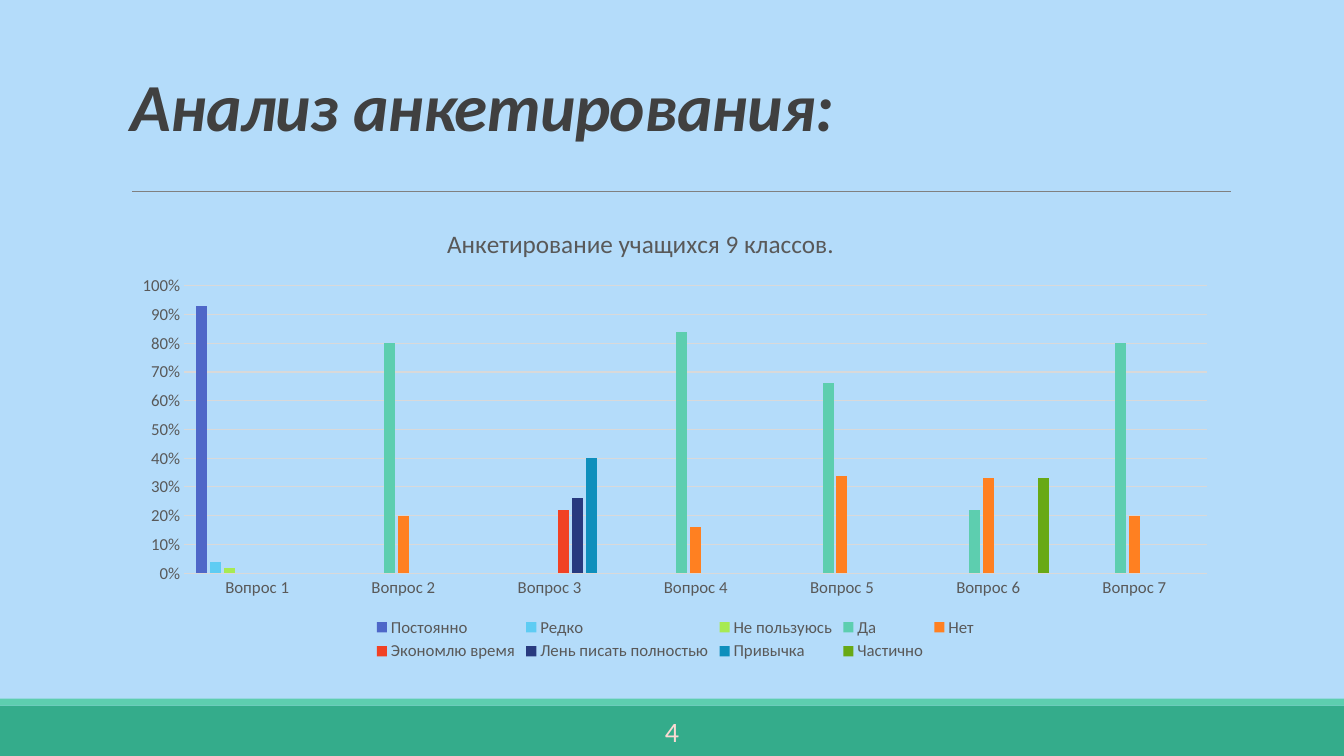
from lxml.etree import SubElement as Sub, Element
from pptx import Presentation
from pptx.chart.data import CategoryChartData as Data
from pptx.dml.color import RGBColor
from pptx.enum.chart import XL_CHART_TYPE as Kind, XL_LEGEND_POSITION as Side, XL_TICK_MARK as Tick
from pptx.enum.shapes import MSO_CONNECTOR as Link, MSO_SHAPE as Form
from pptx.enum.text import MSO_ANCHOR as Anchor, PP_ALIGN as Align
from pptx.oxml.ns import qn
from pptx.util import Inches, Pt

SKY = RGBColor(0xB4, 0xDC, 0xFA)
GREEN = RGBColor(0x34, 0xAC, 0x8B)
MINT = RGBColor(0x5D, 0xCE, 0xAF)
GREY = RGBColor(0x80, 0x80, 0x80)
DARK = RGBColor(0x40, 0x40, 0x40)
PINK = RGBColor(0xFC, 0xD9, 0xD3)
SLATE = RGBColor(0x59, 0x59, 0x59)
PALE = RGBColor(0xD9, 0xD9, 0xD9)
BLUE = RGBColor(0x4E, 0x67, 0xC8)
CYAN = RGBColor(0x5E, 0xCC, 0xF3)
LIME = RGBColor(0xA7, 0xEA, 0x52)
ORANGE = RGBColor(0xFF, 0x80, 0x21)
RED = RGBColor(0xF1, 0x41, 0x24)
NAVY = RGBColor(0x28, 0x3A, 0x7F)
TEAL = RGBColor(0x0E, 0x8F, 0xBC)
LEAF = RGBColor(0x68, 0xA9, 0x15)

WIDE, HIGH = Inches(13.33), Inches(7.5)
FACE = "Calibri"
COUNT = 7
SERIES = [
    ("Постоянно", BLUE, {1: 0.93}),
    ("Редко", CYAN, {1: 0.04}),
    ("Не пользуюсь", LIME, {1: 0.02}),
    ("Да", MINT, {2: 0.8, 4: 0.84, 5: 0.66, 6: 0.22, 7: 0.8}),
    ("Нет", ORANGE, {2: 0.2, 4: 0.16, 5: 0.34, 6: 0.33, 7: 0.2}),
    ("Экономлю время", RED, {3: 0.22}),
    ("Лень писать полностью", NAVY, {3: 0.26}),
    ("Привычка", TEAL, {3: 0.4}),
    ("Частично", LEAF, {6: 0.33}),
]


def grid(x, y, w, h):
    """Turn columns and rows of a 100 by 100 grid into slide lengths."""
    return [int(n * full / 100) for n, full in ((x, WIDE), (y, HIGH), (w, WIDE), (h, HIGH))]


def style(item, **values):
    """Set each given attribute on the item."""
    for name, value in values.items():
        setattr(item, name, value)


def ink(font, size, color, **more):
    """Give a font its face, size and colour."""
    style(font, name=FACE, size=Pt(size), **more)
    font.color.rgb = color


def stroke(line, color, width):
    """Give a line its colour and width."""
    line.color.rgb = color
    line.width = Pt(width)


def band(slide, box, color):
    """Draw a plain bar."""
    bar = slide.shapes.add_shape(Form.RECTANGLE, *grid(*box))
    bar.shadow.inherit = False
    bar.fill.solid()
    bar.fill.fore_color.rgb = color
    bar.line.fill.background()


def rule(slide, x, y, w):
    """Draw a thin level line."""
    left, top, span, _ = grid(x, y, w, 0)
    line = slide.shapes.add_connector(Link.STRAIGHT, left, top, left + span, top)
    stroke(line.line, GREY, 0.5)
    Sub(line._element.spPr, qn("a:effectLst"))


def label(slide, box, text, look, space=0, **para):
    """Write one line of text, centred in height."""
    frame = slide.shapes.add_textbox(*grid(*box)).text_frame
    style(frame, word_wrap=True, vertical_anchor=Anchor.MIDDLE)
    line = frame.paragraphs[0]
    style(line, **para)
    run = line.add_run()
    run.text = text
    ink(run.font, **look)
    run._r.get_or_add_rPr().set("spc", str(space))


def place(part, spot, inner=False, **shares):
    """Fix a chart part at shares of the chart's size."""
    for old in part.findall(qn("c:layout")):
        part.remove(old)
    outer = Element(qn("c:layout"))
    part.insert(spot, outer)
    rules = Sub(outer, qn("c:manualLayout"))
    modes = {"layoutTarget": "inner"} if inner else {}
    for tag, value in {**modes, "xMode": "edge", "yMode": "edge", **shares}.items():
        Sub(rules, qn("c:" + tag)).set("val", str(value))


def axes(chart):
    """Format both axes and the grid lines."""
    for axis in (chart.category_axis, chart.value_axis):
        style(axis, major_tick_mark=Tick.NONE, minor_tick_mark=Tick.NONE)
        ink(axis.tick_labels.font, 12, SLATE)
    stroke(chart.category_axis.format.line, PALE, 0.75)
    axis = chart.value_axis
    style(axis, minimum_scale=0, maximum_scale=1, major_unit=0.1, has_major_gridlines=True)
    style(axis.tick_labels, number_format="0%", number_format_is_linked=False)
    stroke(axis.major_gridlines.format.line, PALE, 0.75)
    axis.format.line.fill.background()


def survey(slide, box):
    """Add the chart of answers."""
    data = Data(number_format="0%")
    data.categories = [f"Вопрос {n}" for n in range(1, COUNT + 1)]
    for name, _, votes in SERIES:
        data.add_series(name, [votes.get(n) for n in range(1, COUNT + 1)])
    chart = slide.shapes.add_chart(Kind.COLUMN_CLUSTERED, *grid(*box), data).chart
    ink(chart.font, 12, SLATE)
    style(chart, has_title=True, has_legend=True)
    frame = chart.chart_title.text_frame
    frame.text = "Анкетирование учащихся 9 классов."
    ink(frame.paragraphs[0].runs[0].font, 18, SLATE, bold=False)
    place(chart.chart_title._element, 1, x=0.29, y=0.04)
    style(chart.legend, position=Side.BOTTOM, include_in_layout=False)
    ink(chart.legend.font, 12, SLATE)
    axes(chart)
    plot = chart.plots[0]
    style(plot, gap_width=219, overlap=-27, vary_by_categories=False)
    for bars, (_, color, _) in zip(plot.series, SERIES):
        bars.invert_if_negative = False
        bars.format.fill.solid()
        bars.format.fill.fore_color.rgb = color
    place(chart._chartSpace.chart.plotArea, 0, True, x=0.057, y=0.178, w=0.923, h=0.623)


def main():
    """Build and save the slide."""
    deck = Presentation()
    style(deck, slide_width=WIDE, slide_height=HIGH)
    slide = deck.slides.add_slide(deck.slide_layouts[6])
    slide.background.fill.solid()
    slide.background.fill.fore_color.rgb = SKY
    band(slide, (0, 93.33, 100, 6.67), GREEN)
    band(slide, (0, 92.4, 100, 0.93), MINT)
    rule(slide, 9.83, 25.33, 81.77)
    label(slide, (9, 4.13, 82.5, 21.2), "Анализ анкетирования:",
          dict(size=48, color=DARK, bold=True, italic=True), -50, line_spacing=0.85)
    label(slide, (30.23, 94.13, 39.54, 5.33), "4",
          dict(size=20, color=PINK), alignment=Align.CENTER)
    survey(slide, (9, 26.93, 82.5, 61.07))
    deck.save("out.pptx")


if __name__ == "__main__":
    main()
